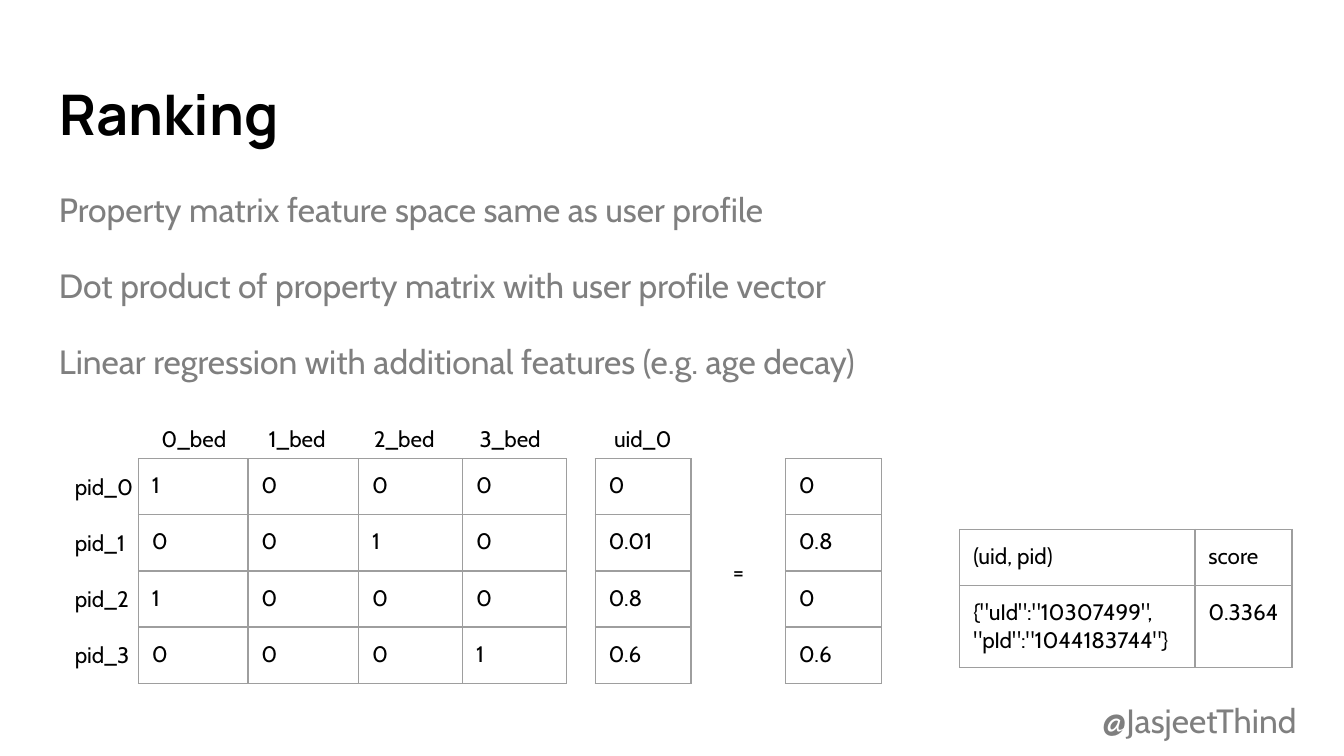
from lxml.etree import SubElement
from pptx import Presentation
from pptx.dml.color import RGBColor
from pptx.enum.text import MSO_ANCHOR, MSO_AUTO_SIZE, PP_ALIGN
from pptx.oxml.ns import qn
from pptx.util import Pt

COLORS = {"ink": "000000", "muted": "7F7F7F", "grid": "9E9E9E", "page": "FFFFFF"}
INSET = 7.2
ROW_HEIGHT = 30.1


class SlideBuilder:
    heading_font = "Manrope"
    body_font = "Cabin"

    def __init__(self, slide):
        self.slide = slide
        slide.background.fill.solid()
        slide.background.fill.fore_color.rgb = RGBColor.from_string(COLORS["page"])

    def add_run(self, paragraph, text, size, color, font=None, bold=False):
        run = paragraph.add_run()
        run.text = text
        run.font.size = Pt(size)
        run.font.name = font or self.body_font
        run.font.bold = bold
        run.font.color.rgb = RGBColor.from_string(COLORS[color])

    def format_frame(self, frame, anchor):
        frame.word_wrap = True
        frame.auto_size = MSO_AUTO_SIZE.NONE
        frame.vertical_anchor = anchor
        frame.margin_left = frame.margin_right = Pt(INSET)
        frame.margin_top = frame.margin_bottom = Pt(INSET)

    def title(self, text, left, top, width, height):
        title = self.slide.shapes.title
        title.left, title.top = Pt(left), Pt(top)
        title.width, title.height = Pt(width), Pt(height)
        self.format_frame(title.text_frame, MSO_ANCHOR.TOP)
        paragraph = title.text_frame.paragraphs[0]
        paragraph.alignment = PP_ALIGN.LEFT
        self.add_run(paragraph, text, 30, "ink", self.heading_font, True)

    def text(self, lines, left, top, width, height, size=12, color="ink",
             anchor=MSO_ANCHOR.MIDDLE, line_spacing=1.0, gap=0):
        box = self.slide.shapes.add_textbox(Pt(left), Pt(top), Pt(width), Pt(height))
        frame = box.text_frame
        self.format_frame(frame, anchor)
        for index, line in enumerate(lines):
            paragraph = frame.add_paragraph() if index else frame.paragraphs[0]
            paragraph.line_spacing = line_spacing
            paragraph.space_before = Pt(gap if index else 0)
            self.add_run(paragraph, line, size, color)

    def table(self, rows, left, top, widths):
        frame = self.slide.shapes.add_table(
            len(rows), len(widths), Pt(left), Pt(top),
            Pt(sum(widths)), Pt(ROW_HEIGHT * len(rows)))
        table = frame.table
        table.first_row = table.horz_banding = False
        for column, width in zip(table.columns, widths):
            column.width = Pt(width)
        for row, values in zip(table.rows, rows):
            row.height = Pt(ROW_HEIGHT)
            for cell, value in zip(row.cells, values):
                cell.margin_left = cell.margin_right = Pt(INSET)
                cell.margin_top = cell.margin_bottom = Pt(INSET)
                self.add_run(cell.text_frame.paragraphs[0], value, 12, "ink")
                self.add_borders(cell)
                cell.fill.background()

    def add_borders(self, cell):
        properties = cell._tc.get_or_add_tcPr()
        for side in ("a:lnL", "a:lnR", "a:lnT", "a:lnB"):
            line = SubElement(properties, qn(side), w=str(Pt(0.75)))
            fill = SubElement(line, qn("a:solidFill"))
            SubElement(fill, qn("a:srgbClr"), val=COLORS["grid"])


def main():
    presentation = Presentation()
    presentation.slide_width, presentation.slide_height = Pt(720), Pt(405)
    builder = SlideBuilder(presentation.slides.add_slide(presentation.slide_layouts[5]))

    builder.title("Ranking", 24.5, 35.3, 671, 49)
    builder.text(
        ["Property matrix feature space same as user profile",
         "Dot product of property matrix with user profile vector",
         "Linear regression with additional features (e.g. age decay)"],
        24.5, 90.7, 671, 269, size=18, color="muted",
        anchor=MSO_ANCHOR.TOP, line_spacing=1.15, gap=16)

    score_rows = [["(uid, pid)", "score"],
                  ['{"uId":"10307499", "pId":"1044183744"}', "0.3364"]]
    builder.table(score_rows, 514.2, 283.7, [126, 52])

    matrix_top = 245.7
    property_matrix = ["1000", "0010", "1000", "0001"]
    user_profile = [["0"], ["0.01"], ["0.8"], ["0.6"]]
    scores = [["0"], ["0.8"], ["0"], ["0.6"]]
    builder.table(property_matrix, 74.2, matrix_top, [58.7, 59.3, 55.7, 55.7])
    builder.table(user_profile, 318.8, matrix_top, [51.4])
    builder.table(scores, 420.8, matrix_top, [51.4])

    label_middle = 235
    column_labels = [("0_bed", 79.4, 57.6, 28), ("1_bed", 136.9, 56, 23),
                     ("2_bed", 193.2, 56.6, 28), ("3_bed", 249.8, 54, 23),
                     ("uid_0", 321.9, 56, 23)]
    for label, left, width, height in column_labels:
        builder.text([label], left, label_middle - height / 2, width, height)
    for index in range(len(property_matrix)):
        builder.text([f"pid_{index}"], 33, 248.9 + index * ROW_HEIGHT, 47, 23)
    builder.text(["="], 385.5, 294.7, 47, 23)

    builder.text(["@JasjeetThind"], 583.4, 366.5, 136.6, 38.5, size=18, color="muted")
    presentation.save("out.pptx")


if __name__ == "__main__":
    main()
